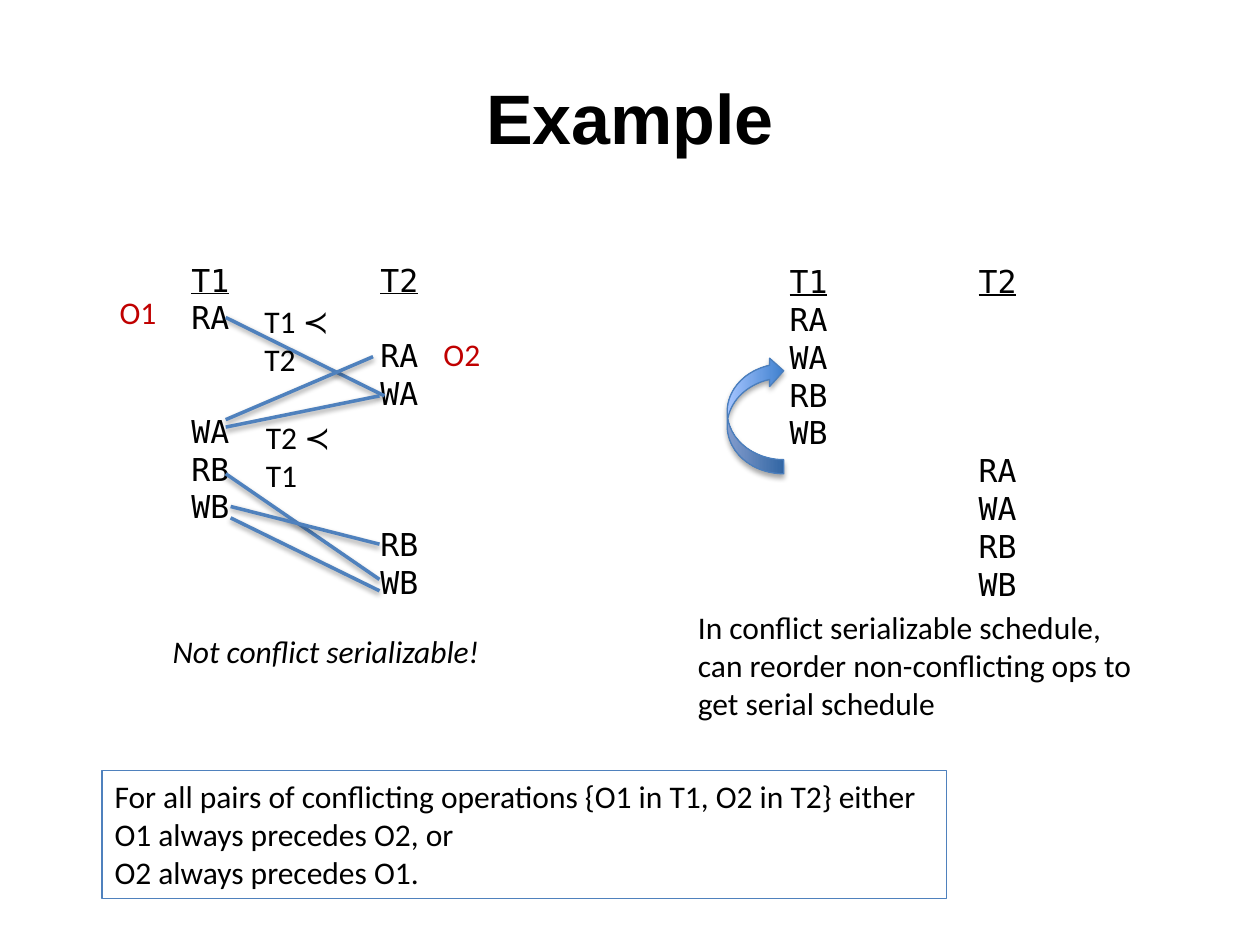
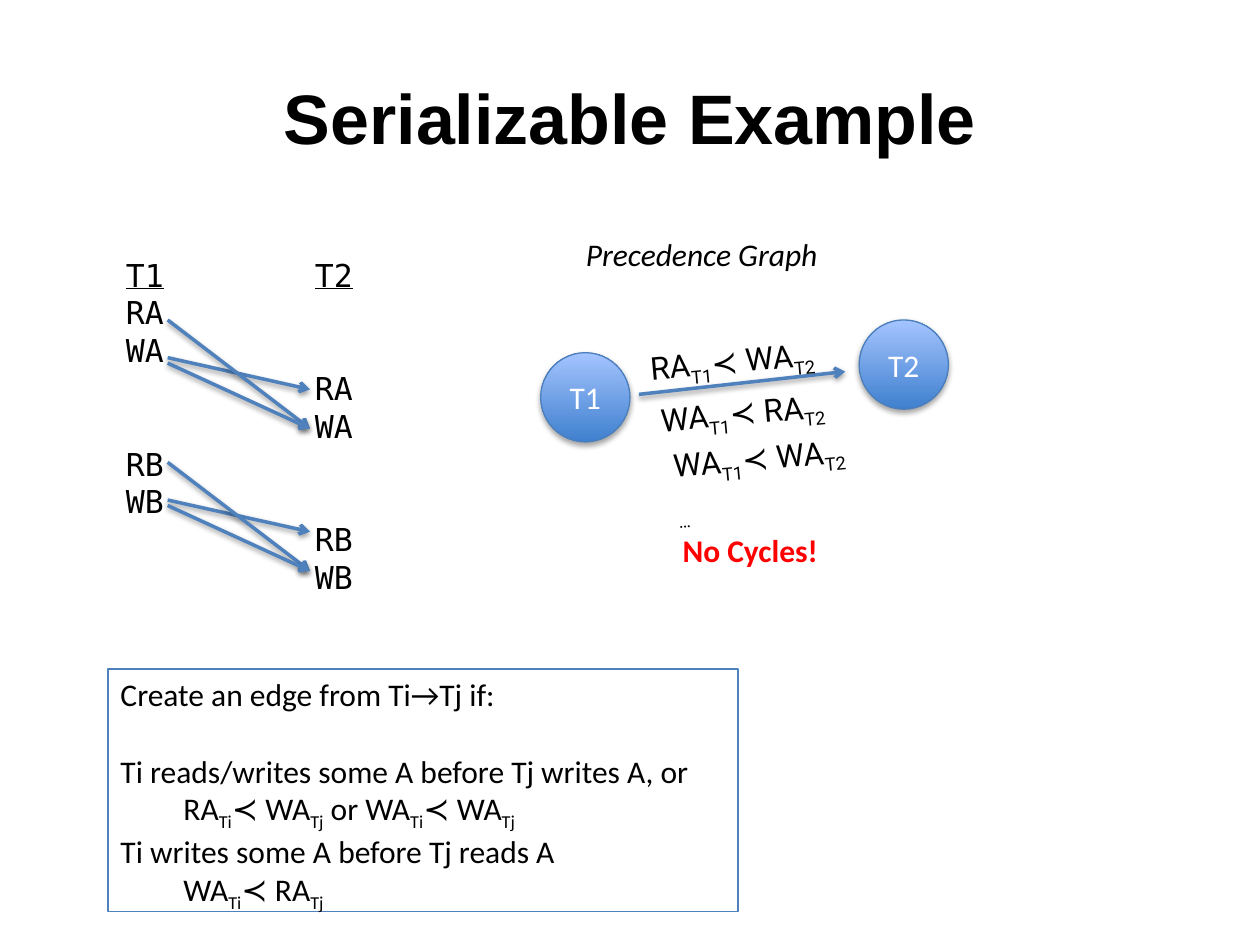
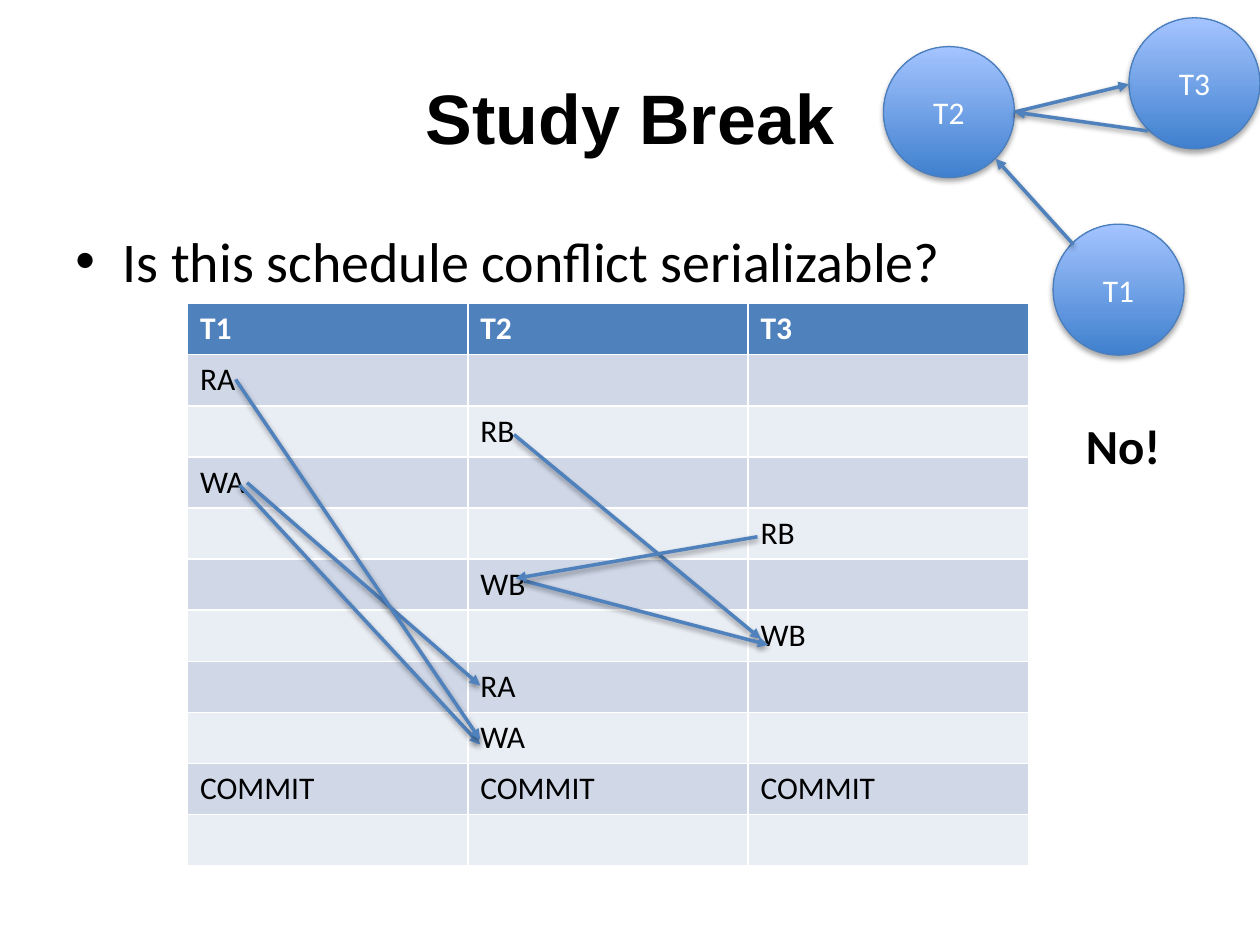
from lxml import etree
from pptx import Presentation
from pptx.dml.color import RGBColor
from pptx.enum import shapes, text
from pptx.oxml import parse_xml
from pptx.oxml.ns import nsdecls, qn
from pptx.util import Cm, Pt

THEME = {
    "black": "000000", "white": "FFFFFF", "red": "FF0000", "dark_red": "C00000",
    "blue": "4F81BD", "edge": "4B7EBC", "low": "3F80CE", "high": "A4C4FF",
    "bands": ("D0D8E8", "E9EDF4"),
    "title": {"name": "Arial", "size": Pt(40), "bold": True},
    "body": {"name": "Calibri", "size": Pt(18)},
    "italic": {"name": "Calibri", "size": Pt(18), "italic": True},
    "strong": {"name": "Calibri", "size": Pt(18), "bold": True},
    "code": {"name": "DejaVu Sans Mono", "size": Pt(18)},
    "formula": {"name": "Roboto", "size": Pt(18)},
    "question": {"name": "Calibri", "size": Pt(32)},
    "answer": {"name": "Calibri", "size": Pt(28), "bold": True},
    "shadow": '<a:effectLst %s><a:outerShdw blurRad="40000" dist="%d" dir="5400000" '
              'rotWithShape="0"><a:srgbClr val="000000"><a:alpha val="%d"/>'
              '</a:srgbClr></a:outerShdw></a:effectLst>',
}


def rgb(name):
    return RGBColor.from_string(THEME[name])


def write(tf, lines, style="body", color="black", align=text.PP_ALIGN.LEFT):
    tf.word_wrap = True
    for i, line in enumerate(lines):
        p = tf.paragraphs[0] if i == 0 else tf.add_paragraph()
        p.alignment = align
        for j, part in enumerate(line.split("|")):
            if not part:
                continue
            r = p.add_run()
            r.text = part
            for key, value in THEME[style].items():
                setattr(r.font, key, value)
            r.font.color.rgb = rgb(color)
            if j % 2 and part.strip():
                r._r.get_or_add_rPr().set("baseline", "-25000")


prs = Presentation()
prs.slide_width, prs.slide_height = Cm(25.4), Cm(19.05)

slides = []
for title in ("Example", "Serializable Example", "Study Break"):
    s = prs.slides.add_slide(prs.slide_layouts[6])
    tf = s.shapes.add_textbox(Cm(1.27), Cm(0.76), Cm(22.86), Cm(3.18)).text_frame
    tf.vertical_anchor = text.MSO_ANCHOR.MIDDLE
    write(tf, [title], "title", align=text.PP_ALIGN.CENTER)
    slides.append(s)
example, serial, study = slides

schedules = [
    (example, 2.34, 5.13, "1RA 2RA 2WA 1WA 1RB 1WB 2RB 2WB"),
    (example, 14.4, 5.16, "1RA 1WA 1RB 1WB 2RA 2WA 2RB 2WB"),
    (serial, 1.02, 5.03, "1RA 1WA 2RA 2WA 1RB 1WB 2RB 2WB"),
]
for s, x, y, ops in schedules:
    sp = s.shapes.add_textbox(Cm(x), Cm(y), Cm(6.99), Cm(9.5))
    sp.fill.solid()
    sp.fill.fore_color.rgb = rgb("white")
    tf = sp.text_frame
    tf.margin_left = Cm(1.52)
    rows = [op[1:] if op[0] == "1" else "\t" + op[1:] for op in ops.split()]
    write(tf, ["T1|\t|T2"] + rows, "code")
    for r in tf.paragraphs[0].runs:
        r.font.underline = r.text != "\t"
    for p in tf.paragraphs:
        tabs = etree.SubElement(p._p.get_or_add_pPr(), qn("a:tabLst"))
        etree.SubElement(tabs, qn("a:tab"), pos=str(Cm(3.81)), algn="l")

tf = study.shapes.add_textbox(Cm(1.27), Cm(4.45), Cm(22.86), Cm(12.57)).text_frame
write(tf, ["Is this schedule conflict serializable?"], "question")
pPr = tf.paragraphs[0]._p.get_or_add_pPr()
pPr.set("marL", str(Cm(0.95)))
pPr.set("indent", str(-Cm(0.95)))
etree.SubElement(pPr, qn("a:buFont"), typeface="Arial")
etree.SubElement(pPr, qn("a:buChar"), char="•")

grid = [
    ("T1", "T2", "T3"), ("RA", "", ""), ("", "RB", ""), ("WA", "", ""),
    ("", "", "RB"), ("", "WB", ""), ("", "", "WB"), ("", "RA", ""),
    ("", "WA", ""), ("COMMIT",) * 3, ("",) * 3,
]
tbl = study.shapes.add_table(len(grid), 3, Cm(3.78), Cm(6.12), Cm(16.95), Cm(11.33)).table
for col in tbl.columns:
    col.width = Cm(5.65)
for i, row in enumerate(grid):
    tbl.rows[i].height = Cm(1.03)
    for j, value in enumerate(row):
        cell = tbl.cell(i, j)
        cell.fill.solid()
        band = THEME["bands"][(i - 1) % 2] if i else THEME["blue"]
        cell.fill.fore_color.rgb = RGBColor.from_string(band)
        if value:
            write(cell.text_frame, [value], "body" if i else "strong", "black" if i else "white")

OVAL, CURVE = shapes.MSO_SHAPE.OVAL, shapes.MSO_SHAPE.CURVED_DOWN_ARROW
glossy = [
    (example, CURVE, (14.05, 7.8, 2.36, 1.14), 270, ""),
    (serial, OVAL, (10.9, 7.11, 1.8, 1.8), 0, "T1"),
    (serial, OVAL, (17.32, 6.45, 1.8, 1.8), 0, "T2"),
    (study, OVAL, (21.23, 4.52, 2.64, 2.64), 0, "T1"),
    (study, OVAL, (17.81, 0.94, 2.64, 2.64), 0, "T2"),
    (study, OVAL, (22.76, 0.36, 2.64, 2.64), 0, "T3"),
]
for s, kind, box, turn, label in glossy:
    sp = s.shapes.add_shape(kind, *map(Cm, box))
    sp.rotation = turn
    sp.fill.gradient()
    sp.fill.gradient_angle = 90
    for stop, name, at in zip(sp.fill.gradient_stops, ("low", "high"), (0, 1)):
        stop.color.rgb = rgb(name)
        stop.position = at
    sp.line.color.rgb = rgb("edge")
    sp.line.width = Pt(0.75)
    sp._element.spPr.append(parse_xml(THEME["shadow"] % (nsdecls("a"), 23000, 35000)))
    if label:
        tf = sp.text_frame
        tf.margin_left = tf.margin_right = 0
        tf.vertical_anchor = text.MSO_ANCHOR.MIDDLE
        write(tf, [label], color="white", align=text.PP_ALIGN.CENTER)

conflicts = [
    (3.38, y1 + dy, 6.25, y2 + dy)
    for dy in (0, 2.87)
    for y1, y2 in ((7.21, 7.85), (6.45, 8.64), (7.32, 8.64))
]
links = [
    (example, None, [
        (4.55, 6.4, 7.75, 7.98), (7.52, 7.19, 4.55, 8.46), (7.65, 7.98, 4.55, 8.61),
        (4.55, 9.55, 7.65, 11.68), (7.65, 10.97, 4.65, 10.21), (7.65, 11.91, 4.65, 10.44),
    ]),
    (serial, "arrow", conflicts + [(12.88, 7.95, 17.04, 7.49)]),
    (study, "triangle", [
        (4.98, 9.73, 9.68, 13.82), (4.83, 9.78, 9.68, 15.01), (4.75, 7.65, 9.68, 14.91),
        (10.36, 8.76, 15.34, 12.88), (10.57, 11.71, 15.49, 13), (15.27, 10.82, 10.39, 11.66),
        (21.64, 4.93, 20.07, 3.2), (20.45, 2.26, 22.76, 1.7), (23.14, 2.64, 20.45, 2.26),
    ]),
]
for s, head, ends in links:
    for end in ends:
        c = s.shapes.add_connector(shapes.MSO_CONNECTOR.STRAIGHT, *map(Cm, end))
        c.line.color.rgb = rgb("blue")
        c.line.width = Pt(2)
        spPr = c._element.spPr
        if head:
            etree.SubElement(spPr.find(qn("a:ln")), qn("a:tailEnd"), type=head)
        spPr.append(parse_xml(THEME["shadow"] % (nsdecls("a"), 20000, 38000)))

notes = [
    (example, (5.08, 5.97, 2.54, 1.02), ["T1 ≺ T2"], "body", "black"),
    (example, (5.11, 8.31, 2.54, 1.02), ["T2 ≺ T1"], "body", "black"),
    (example, (3.23, 12.62, 6.78, 1.02), ["Not conflict serializable!"], "italic", "black"),
    (example, (13.82, 12.14, 9.53, 2.57),
     ["In conflict serializable schedule, can reorder non-conflicting ops to get serial schedule"],
     "body", "black"),
    (example, (2.16, 5.79, 1.6, 1.02), ["O1"], "body", "dark_red"),
    (example, (8.69, 6.63, 1.6, 1.02), ["O2"], "body", "dark_red"),
    (serial, (11.56, 4.62, 5.41, 1.02), ["Precedence Graph"], "italic", "black"),
    (serial, (12.85, 6.73, 4.52, 1.02), ["RA|T1|≺ WA|T2"], "formula", "black"),
    (serial, (13.06, 7.77, 4.52, 1.02), ["WA|T1|≺ RA|T2"], "formula", "black"),
    (serial, (13.34, 8.69, 4.52, 1.55), ["WA|T1|≺ WA|T2", "|…"], "formula", "black"),
    (serial, (13.51, 10.59, 3.45, 1.02), ["No Cycles!"], "strong", "red"),
    (study, (21.64, 8.26, 2.84, 1.45), ["No!"], "answer", "black"),
]
for s, box, lines, style, color in notes:
    sp = s.shapes.add_textbox(*map(Cm, box))
    sp.rotation = -5.3 if style == "formula" else 0
    write(sp.text_frame, lines, style, color)

rules = [
    (example, (2.06, 15.54, 17.02, 2.57), [
        "For all pairs of conflicting operations {O1 in T1, O2 in T2} either",
        "O1 always precedes O2, or",
        "O2 always precedes O1.",
    ]),
    (serial, (2.18, 13.49, 12.7, 4.88), [
        "Create an edge from Ti→Tj if:",
        "Ti reads/writes some A before Tj writes A, or",
        "RA|Ti|≺ WA|Tj| or WA|Ti|≺ WA|Tj",
        "Ti writes some A before Tj reads A",
        "WA|Ti|≺ RA|Tj",
    ]),
]
for s, box, lines in rules:
    sp = s.shapes.add_textbox(*map(Cm, box))
    sp.line.color.rgb = rgb("blue")
    sp.line.width = Pt(0.75)
    tf = sp.text_frame
    write(tf, lines)
    for p, line in zip(tf.paragraphs, lines):
        if "|" in line:
            p._p.get_or_add_pPr().set("marL", str(Cm(1.27)))
tf.paragraphs[1].space_before = Pt(22)

prs.save("out.pptx")
